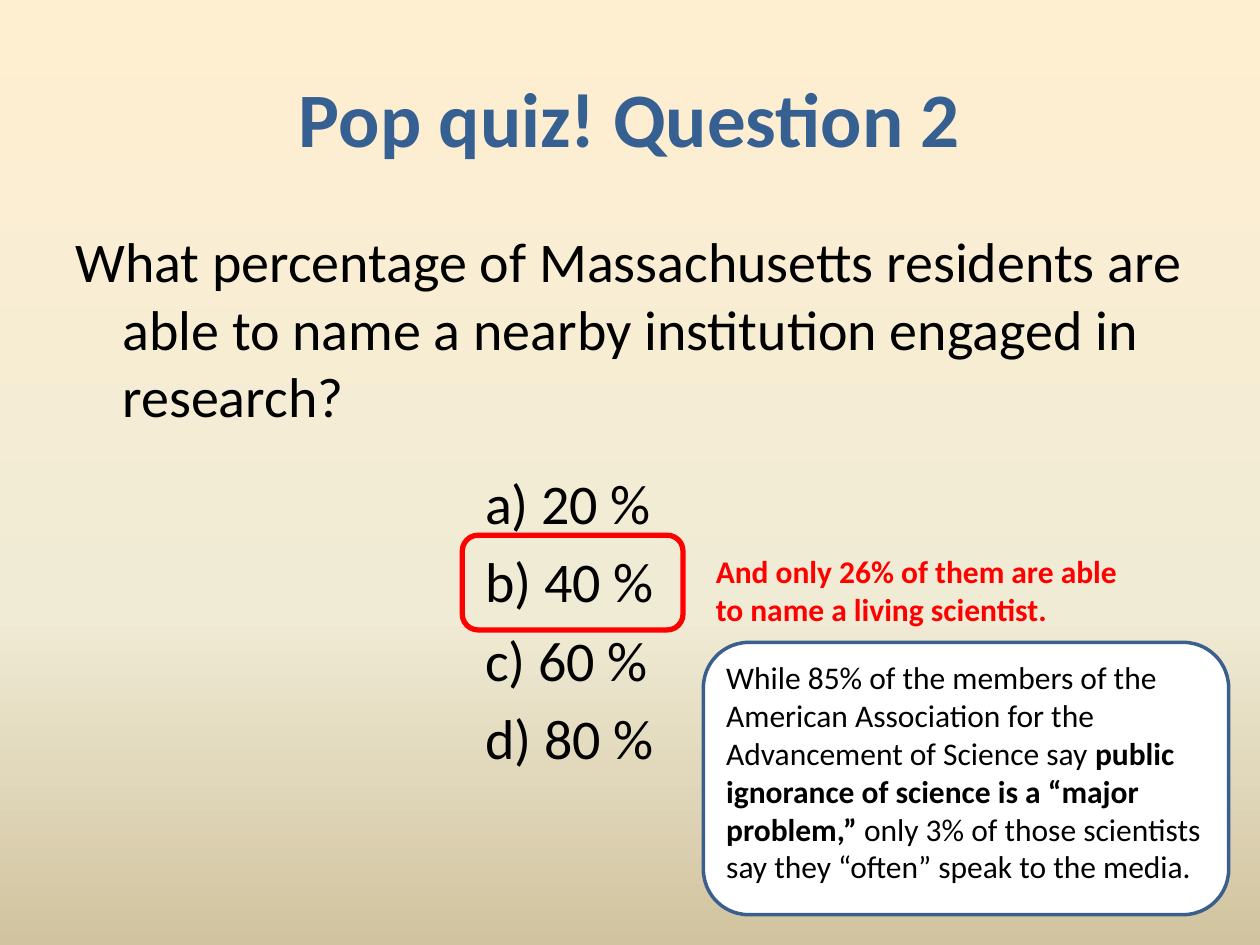
from copy import deepcopy
from dataclasses import dataclass

from pptx import Presentation
from pptx.dml.color import RGBColor as Color
from pptx.enum.shapes import MSO_SHAPE as Shape
from pptx.enum.text import MSO_ANCHOR as Anchor, PP_ALIGN as Align
from pptx.oxml.ns import qn
from pptx.util import Cm, Pt


@dataclass(frozen=True)
class Theme:
    font: str = "Calibri"
    title: str = "376092"
    ink: str = "000000"
    accent: str = "FF0000"
    card: str = "FFFFFF"
    border: str = "3A5F8C"
    backdrop: tuple = ((0, "FFEFD1"), (0.65, "F0EBD5"), (1, "D1C39F"))
    title_size: int = 44
    body_size: int = 32
    note_size: int = 18


@dataclass(frozen=True)
class Box:
    left: float
    top: float
    width: float
    height: float

    def inner(self, left, top, width, height):
        return Box(self.left + left, self.top + top, width, height)

    def lengths(self):
        return [Cm(side) for side in (self.left, self.top, self.width, self.height)]


THEME = Theme()
HANGING = Cm(0.95)


def paint_backdrop(page):
    fill = page.background.fill
    fill.gradient()
    fill.gradient_angle = 270
    stop_list = page._element.find(".//" + qn("a:gsLst"))
    stop_list.append(deepcopy(stop_list[-1]))
    for stop, (position, color) in zip(fill.gradient_stops, THEME.backdrop):
        stop.position = position
        stop.color.rgb = Color.from_string(color)


def add_text(page, box, paragraphs, size, color, align=Align.LEFT,
             anchor=Anchor.TOP, wrap=True, hanging=False):
    frame = page.shapes.add_textbox(*box.lengths()).text_frame
    frame.word_wrap = wrap
    frame.vertical_anchor = anchor
    for index, spans in enumerate(paragraphs):
        para = frame.add_paragraph() if index else frame.paragraphs[0]
        para.alignment = align
        if hanging:
            para.space_before = Pt(size * 0.2)
            properties = para._p.get_or_add_pPr()
            properties.set("marL", str(HANGING))
            properties.set("indent", str(-HANGING))
        for text, bold in spans:
            span = para.add_run()
            span.text = text
            span.font.name = THEME.font
            span.font.size = Pt(size)
            span.font.bold = bold
            span.font.color.rgb = Color.from_string(color)


def add_rounded(page, box, line, weight, fill=None):
    shape = page.shapes.add_shape(Shape.ROUNDED_RECTANGLE, *box.lengths())
    shape.shadow.inherit = False
    shape.line.color.rgb = Color.from_string(line)
    shape.line.width = Pt(weight)
    if fill:
        shape.fill.solid()
        shape.fill.fore_color.rgb = Color.from_string(fill)
    else:
        shape.fill.background()


def add_title(page, box):
    add_text(page, box, [[("Pop quiz! Question 2", True)]], THEME.title_size,
             THEME.title, align=Align.CENTER, anchor=Anchor.MIDDLE)


def add_question(page, box):
    question = ("What percentage of Massachusetts residents are able to name "
                "a nearby institution engaged in research?")
    add_text(page, box, [[(question, False)]], THEME.body_size, THEME.ink, hanging=True)


def add_answers(page, box):
    answers = [[(f"{letter}) {20 * rank} %", False)]
               for rank, letter in enumerate("abcd", 1)]
    add_text(page, box, answers, THEME.body_size, THEME.ink, hanging=True)
    add_rounded(page, box.inner(-0.21, 1.47, 4.45, 1.91), THEME.accent, 3)


def add_remark(page, box):
    lines = ("And only 26% of them are able", "to name a living scientist.")
    add_text(page, box, [[(line, True)] for line in lines], THEME.note_size,
             THEME.accent, wrap=False)


def add_fact_card(page, box):
    add_rounded(page, box, THEME.border, 2, THEME.card)
    fact = [
        ("While 85% of the members of the American Association for the "
         "Advancement of Science say ", False),
        ("public ignorance of science is a “major problem,”", True),
        (" only 3% of those scientists say they “often” speak to the media.", False),
    ]
    add_text(page, box.inner(0.21, 0.2, 10.36, 5.46), [fact],
             THEME.note_size, THEME.ink)


def main():
    deck = Presentation()
    deck.slide_width, deck.slide_height = Cm(25.4), Cm(19.05)
    page = deck.slides.add_slide(deck.slide_layouts[6])
    paint_backdrop(page)
    add_title(page, Box(1.27, 0.76, 22.86, 3.18))
    add_question(page, Box(1.27, 4.45, 22.86, 4.65))
    add_answers(page, Box(9.53, 9.32, 4.45, 7.19))
    add_remark(page, Box(14.18, 11, 8.69, 1.8))
    add_fact_card(page, Box(14.18, 12.95, 10.59, 5.49))
    deck.save("out.pptx")


if __name__ == "__main__":
    main()
